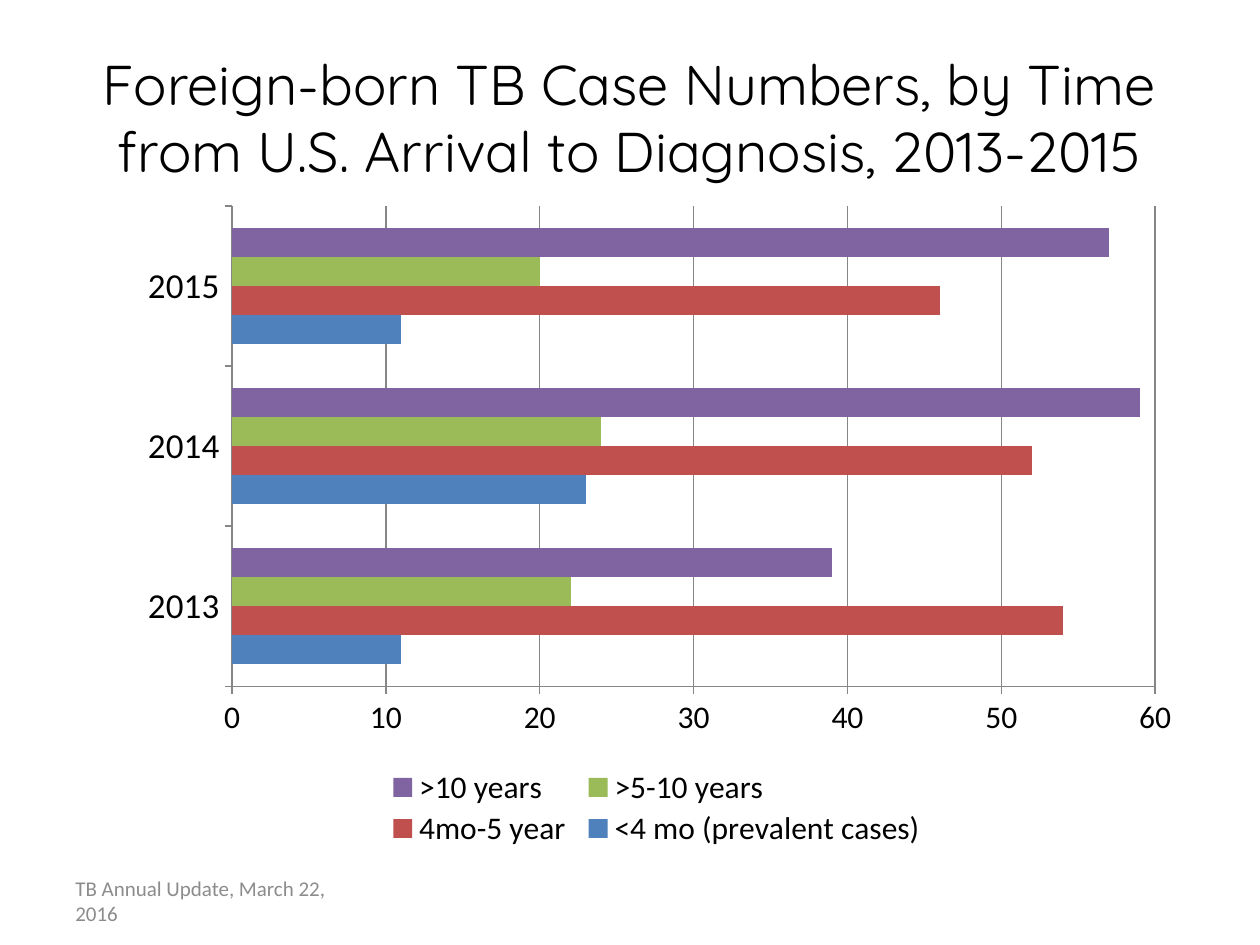
"""Build a slide with a clustered bar chart of foreign-born TB cases by time since arrival."""
from dataclasses import dataclass

from pptx import Presentation
from pptx.chart.data import CategoryChartData
from pptx.dml.color import RGBColor
from pptx.enum.chart import XL_CHART_TYPE, XL_LEGEND_POSITION, XL_TICK_MARK
from pptx.enum.text import MSO_ANCHOR, PP_ALIGN
from pptx.oxml import parse_xml
from pptx.oxml.ns import nsdecls
from pptx.util import Cm, Pt

BAR = XL_CHART_TYPE.BAR_CLUSTERED
BOTTOM = XL_LEGEND_POSITION.BOTTOM
OUTSIDE, NO_TICK = XL_TICK_MARK.OUTSIDE, XL_TICK_MARK.NONE
MIDDLE = MSO_ANCHOR.MIDDLE
CENTER, LEFT = PP_ALIGN.CENTER, PP_ALIGN.LEFT

BLACK = RGBColor(0x00, 0x00, 0x00)
GREY = RGBColor(0x8C, 0x8C, 0x8C)
AXIS_GREY = RGBColor(0x86, 0x86, 0x86)
BLUE = RGBColor(0x4F, 0x81, 0xBD)
RED = RGBColor(0xC0, 0x50, 0x4D)
GREEN = RGBColor(0x9B, 0xBB, 0x59)
PURPLE = RGBColor(0x80, 0x64, 0xA2)


@dataclass
class Box:
    left: float
    top: float
    width: float
    height: float

    def lengths(self) -> tuple:
        return Cm(self.left), Cm(self.top), Cm(self.width), Cm(self.height)


@dataclass
class Series:
    name: str
    values: tuple
    color: RGBColor


YEARS = ("2013", "2014", "2015")
SERIES = (
    Series("<4 mo (prevalent cases)", (11, 23, 11), BLUE),
    Series("4mo-5 year", (54, 52, 46), RED),
    Series(">5-10 years", (22, 24, 20), GREEN),
    Series(">10 years", (39, 59, 57), PURPLE),
)
TITLE_BOX = Box(1.27, 0.76, 22.86, 3.18)
FOOTER_BOX = Box(1.27, 17.65, 5.92, 1.02)
CHART_BOX = Box(2.54, 3.89, 21.39, 13.26)
PLOT_SHARE = Box(0.1, 0.02, 0.87, 0.73)
LEGEND_SHARE = Box(0.24, 0.87, 0.52, 0.13)


def set_font(font, color: RGBColor, **formats) -> None:
    for name, value in formats.items():
        setattr(font, name, value)
    font.color.rgb = color


def fill_text(sp, text: str, align, color: RGBColor, **formats) -> None:
    tf = sp.text_frame
    tf.word_wrap = True
    tf.vertical_anchor = MIDDLE
    p = tf.paragraphs[0]
    p.alignment = align
    r = p.add_run()
    r.text = text
    set_font(r.font, color, **formats)


def make_layout(share: Box, inner: bool = False):
    target = '<c:layoutTarget val="inner"/>' if inner else ""
    return parse_xml(
        f'<c:layout {nsdecls("c")}><c:manualLayout>{target}'
        '<c:xMode val="edge"/><c:yMode val="edge"/>'
        f'<c:x val="{share.left}"/><c:y val="{share.top}"/>'
        f'<c:w val="{share.width}"/><c:h val="{share.height}"/>'
        "</c:manualLayout></c:layout>"
    )


def place_parts(chart) -> None:
    root = chart.element
    for old in root.xpath(".//c:plotArea/c:layout | .//c:legend/c:layout"):
        old.getparent().remove(old)
    root.xpath(".//c:plotArea")[0].insert(0, make_layout(PLOT_SHARE, inner=True))
    root.xpath(".//c:legend/c:legendPos")[0].addnext(make_layout(LEGEND_SHARE))


def style_line(line) -> None:
    line.color.rgb = AXIS_GREY
    line.width = Pt(0.75)


def style_axis(axis, size: int, gridlines: bool) -> None:
    formats = {
        "major_tick_mark": OUTSIDE,
        "minor_tick_mark": NO_TICK,
        "has_major_gridlines": gridlines,
    }
    for name, value in formats.items():
        setattr(axis, name, value)
    style_line(axis.format.line)
    if gridlines:
        style_line(axis.major_gridlines.format.line)
    set_font(axis.tick_labels.font, BLACK, name="Calibri", size=Pt(size))


def add_case_chart(slide) -> None:
    data = CategoryChartData()
    data.categories = YEARS
    for s in SERIES:
        data.add_series(s.name, s.values)
    chart = slide.shapes.add_chart(BAR, *CHART_BOX.lengths(), data).chart
    chart.has_title = False
    set_font(chart.font, BLACK, name="Calibri", size=Pt(18))

    plot = chart.plots[0]
    for name, value in {"gap_width": 150, "overlap": 0, "vary_by_categories": False}.items():
        setattr(plot, name, value)
    for item, s in zip(plot.series, SERIES):
        item.format.fill.solid()
        item.format.fill.fore_color.rgb = s.color
        item.invert_if_negative = False

    style_axis(chart.category_axis, 20, gridlines=False)
    style_axis(chart.value_axis, 18, gridlines=True)
    for name, value in {"minimum_scale": 0, "maximum_scale": 60, "major_unit": 10}.items():
        setattr(chart.value_axis, name, value)

    chart.has_legend = True
    chart.legend.position = BOTTOM
    chart.legend.include_in_layout = False
    set_font(chart.legend.font, BLACK, name="Calibri", size=Pt(18))
    place_parts(chart)


def main() -> None:
    prs = Presentation()
    prs.slide_width, prs.slide_height = Cm(25.4), Cm(19.05)
    slide = prs.slides.add_slide(prs.slide_layouts[5])

    title = slide.shapes.title
    title.left, title.top, title.width, title.height = TITLE_BOX.lengths()
    fill_text(
        title,
        "Foreign-born TB Case Numbers, by Time from U.S. Arrival to Diagnosis, 2013-2015",
        CENTER, BLACK, name="Quicksand", size=Pt(32),
    )
    footer = slide.shapes.add_textbox(*FOOTER_BOX.lengths())
    fill_text(
        footer, "TB Annual Update, March 22, 2016",
        LEFT, GREY, name="Calibri", size=Pt(12),
    )
    add_case_chart(slide)
    prs.save("out.pptx")


if __name__ == "__main__":
    main()
